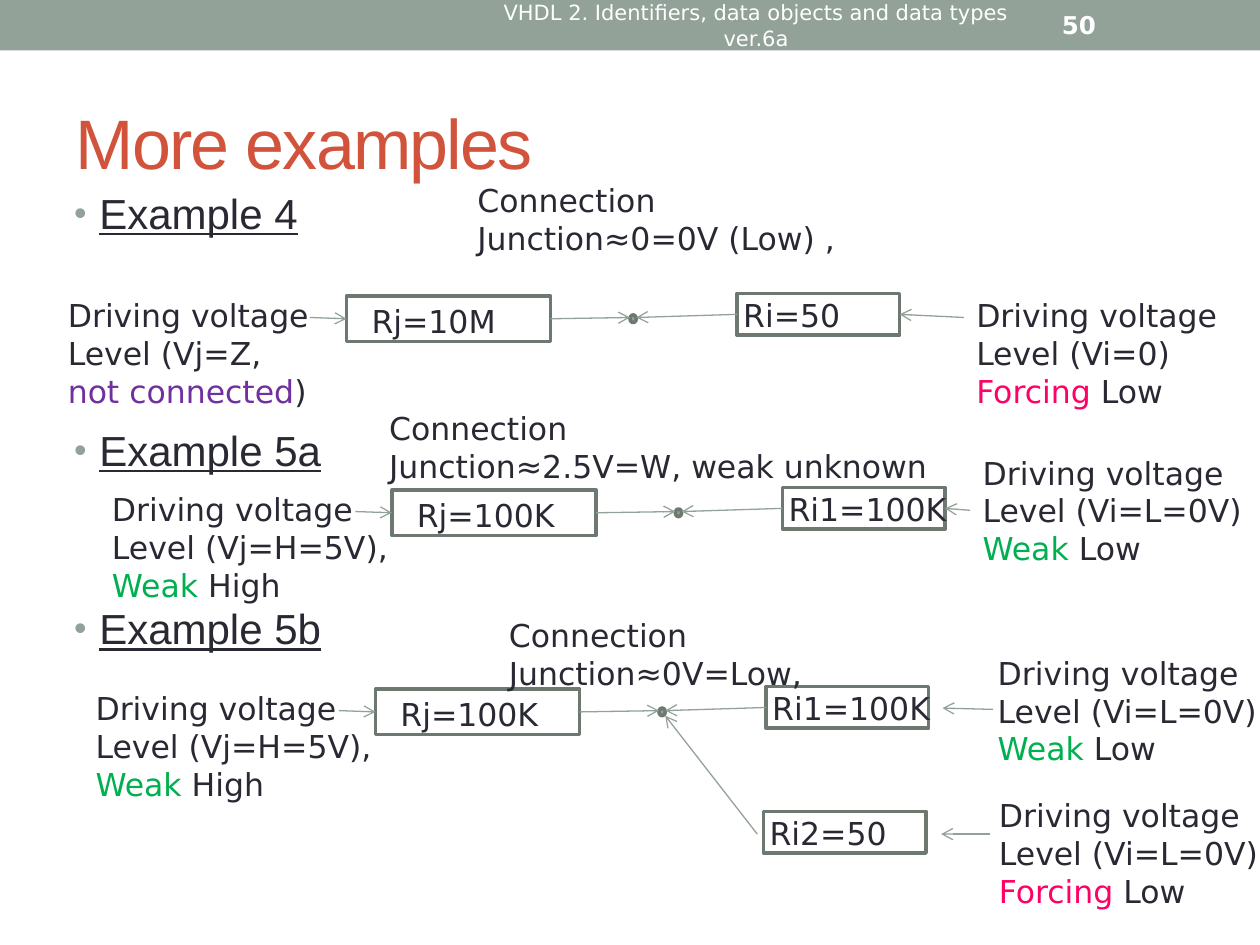
from lxml import etree
from pptx import Presentation
from pptx.dml.color import RGBColor
from pptx.enum.shapes import MSO_CONNECTOR, MSO_SHAPE
from pptx.enum.text import MSO_ANCHOR, PP_ALIGN
from pptx.oxml.ns import qn
from pptx.util import Inches, Pt

RECTANGLE, OVAL = MSO_SHAPE.RECTANGLE, MSO_SHAPE.OVAL
STRAIGHT = MSO_CONNECTOR.STRAIGHT
MIDDLE, CENTER, LEFT = MSO_ANCHOR.MIDDLE, PP_ALIGN.CENTER, PP_ALIGN.LEFT
LEFT_SIDE, RIGHT_SIDE = 1, 3

SAGE, EDGE, INK, RED, WHITE = "93A299", "6D7871", "292934", "D2533C", "FFFFFF"
GREEN, PINK, PURPLE = "00B050", "FF0066", "7030A0"
SANS, HEADING = "DejaVu Sans", "Arial"

TITLE = "More examples"
FOOTER = "VHDL 2. Identifiers, data objects and data types ver.6a"
PAGE = "50"
HEADINGS = [("Example 4", 3), ("Example 5a", 106.7), ("Example 5b", 73)]  # text, space before

DRIVE = "Driving voltage"
HIGH = [DRIVE, "Level (Vj=H=5V),", ("Weak", GREEN, " High")]
WEAK_LOW = [DRIVE, "Level (Vi=L=0V)", ("Weak", GREEN, " Low")]
FORCING_LOW = [DRIVE, "Level (Vi=L=0V)", ("Forcing", PINK, " Low")]

# origin: top left of the left resistor; texts: (left, top, width, lines)
CIRCUITS = [
    {"origin": (2.75, 2.35), "left": "Rj=10M", "left_width": 1.21,
     "right": "Ri=50", "right_width": 0.98, "drive_from": (7.65, 2.52), "drive_to": None,
     "texts": [
         (0.44, 2.3, 2.13, [DRIVE, "Level (Vj=Z,", ("not connected", PURPLE, ")")]),
         (3.69, 1.39, 3.18, ["Connection", "Junction≈0=0V (Low) ,"]),
         (7.65, 2.3, 2.13, [DRIVE, "Level (Vi=0)", ("Forcing", PINK, " Low")])]},
    {"origin": (3.11, 3.89), "left": "Rj=100K", "left_width": 1.33,
     "right": "Ri1=100K", "right_width": 1.48, "drive_from": (7.7, 4.05), "drive_to": None,
     "texts": [
         (0.79, 3.84, 2.55, HIGH),
         (2.99, 3.2, 4.56, ["Connection", "Junction≈2.5V=W, weak unknown"]),
         (7.7, 3.55, 2.31, WEAK_LOW)]},
    {"origin": (2.98, 5.47), "left": "Rj=100K", "left_width": 1.33,
     "right": "Ri1=100K", "right_width": 1.48, "drive_from": (7.88, 5.63),
     "drive_to": (7.48, 5.62),
     "texts": [
         (0.66, 5.42, 2.55, HIGH),
         (3.94, 4.84, 2.62, ["Connection", "Junction≈0V=Low,"]),
         (7.82, 5.14, 2.31, WEAK_LOW),
         (7.83, 6.27, 2.4, FORCING_LOW)]},
]


def rgb(value):
    return RGBColor.from_string(value)


def style(font, size, color, name=SANS):
    font.size, font.name = Pt(size), name
    font.color.rgb = rgb(color)


def add_text(slide, left, top, width, height, lines, size=18, color=INK, wrap=False):
    """Add a text box; a line is a string or (coloured word, colour, rest)."""
    box = slide.shapes.add_textbox(Inches(left), Inches(top), Inches(width), Inches(height))
    frame = box.text_frame
    frame.word_wrap = wrap
    for index, line in enumerate(lines):
        paragraph = frame.paragraphs[0] if index == 0 else frame.add_paragraph()
        style(paragraph.font, size, color)
        if isinstance(line, str):
            paragraph.text = line
        else:
            word, word_color, rest = line
            run = paragraph.add_run()
            run.text = word
            run.font.color.rgb = rgb(word_color)
            paragraph.add_run().text = rest
    return frame


def add_box(slide, kind, left, top, width, height, fill=None, line=EDGE):
    shape = slide.shapes.add_shape(kind, Inches(left), Inches(top), Inches(width), Inches(height))
    shape.shadow.inherit = False
    if fill:
        shape.fill.solid()
        shape.fill.fore_color.rgb = rgb(fill)
    else:
        shape.fill.background()
    if line:
        shape.line.color.rgb = rgb(line)
        shape.line.width = Pt(2.08)
    else:
        shape.line.fill.background()
    return shape


def add_arrow(slide, start, end, begin=None, finish=None):
    """Draw an arrow; begin and finish are optional (shape, side) joints."""
    arrow = slide.shapes.add_connector(STRAIGHT, *map(Inches, start + end))
    if begin:
        arrow.begin_connect(*begin)
    if finish:
        arrow.end_connect(*finish)
    arrow.line.color.rgb = rgb(SAGE)
    arrow.line.width = Pt(0.75)
    etree.SubElement(arrow.line._get_or_add_ln(), qn("a:tailEnd"), type="arrow")
    etree.SubElement(arrow._element.spPr, qn("a:effectLst"))


def add_resistor(slide, left, top, width, height, label, label_offset, label_width):
    box = add_box(slide, RECTANGLE, left, top, width, height)
    across, down = label_offset
    add_text(slide, left + across, top + down, label_width, 0.4, [label])
    return box


def add_circuit(slide, circuit):
    x, y = circuit["origin"]
    left = add_resistor(slide, x, y, 1.62, 0.36, circuit["left"], (0.1, 0),
                        circuit["left_width"])
    right = add_resistor(slide, x + 3.1, y - 0.02, 1.29, 0.33, circuit["right"],
                         (-0.05, -0.03), circuit["right_width"])
    add_box(slide, OVAL, x + 2.25, y + 0.15, 0.05, 0.06, SAGE)
    add_arrow(slide, (x - 0.29, y + 0.17), (x, y + 0.17), finish=(left, LEFT_SIDE))
    add_arrow(slide, (x + 1.62, y + 0.17), (x + 2.25, y + 0.17), begin=(left, RIGHT_SIDE))
    add_arrow(slide, (x + 3.1, y + 0.16), (x + 2.3, y + 0.17), begin=(right, LEFT_SIDE))
    gap_end = circuit["drive_to"]
    add_arrow(slide, circuit["drive_from"], gap_end or (x + 4.39, y + 0.15),
              finish=None if gap_end else (right, RIGHT_SIDE))
    for text_left, top, width, lines in circuit["texts"]:
        add_text(slide, text_left, top, width, 1.01, lines)


def add_headings(slide):
    frame = add_text(slide, 0.49, 1.44, 9, 5.33, [text for text, _ in HEADINGS], wrap=True)
    for paragraph, (_, space) in zip(frame.paragraphs, HEADINGS):
        style(paragraph.font, 24, INK, HEADING)
        paragraph.font.underline = True
        paragraph.space_before = Pt(space)
        properties = paragraph._p.get_or_add_pPr()
        properties.set("marL", str(Inches(0.2)))
        properties.set("indent", str(Inches(-0.2)))
        bullet = [etree.Element(qn("a:buClr")),
                  etree.Element(qn("a:buSzPct"), val="85000"),
                  etree.Element(qn("a:buFont"), typeface=HEADING),
                  etree.Element(qn("a:buChar"), char="•")]
        etree.SubElement(bullet[0], qn("a:srgbClr"), val=SAGE)
        defaults = properties.find(qn("a:defRPr"))
        for element in bullet:
            defaults.addprevious(element)


def add_title(slide):
    title = slide.shapes.title
    title.left, title.top, title.width, title.height = map(Inches, (0.5, 0.58, 9, 1.08))
    title.text_frame.text = TITLE
    title.text_frame.vertical_anchor = MIDDLE
    paragraph = title.text_frame.paragraphs[0]
    paragraph.alignment = LEFT
    style(paragraph.font, 40, RED, HEADING)
    paragraph.runs[0]._r.get_or_add_rPr().set("spc", "-100")


def add_header(slide):
    add_box(slide, RECTANGLE, 0, 0, 10, 0.4, SAGE, None)
    footer = add_text(slide, 3.75, 0.02, 4.5, 0.36, [FOOTER], 12, WHITE, True)
    footer.paragraphs[0].alignment = CENTER
    page = add_text(slide, 8.33, 0.02, 1.17, 0.36, [PAGE], 14, WHITE, True)
    page.paragraphs[0].font.bold = True
    footer.vertical_anchor = page.vertical_anchor = MIDDLE


def main():
    presentation = Presentation()
    presentation.slide_width, presentation.slide_height = Inches(10), Inches(7.5)
    slide = presentation.slides.add_slide(presentation.slide_layouts[5])
    add_header(slide)
    add_title(slide)
    add_headings(slide)
    for circuit in CIRCUITS:
        add_circuit(slide, circuit)
    add_resistor(slide, 6.06, 6.44, 1.29, 0.33, "Ri2=50", (-0.05, -0.03), 1.14)
    add_arrow(slide, (7.86, 6.62), (7.47, 6.62))
    add_arrow(slide, (6.01, 6.62), (5.28, 5.68))
    presentation.save("out.pptx")


if __name__ == "__main__":
    main()
